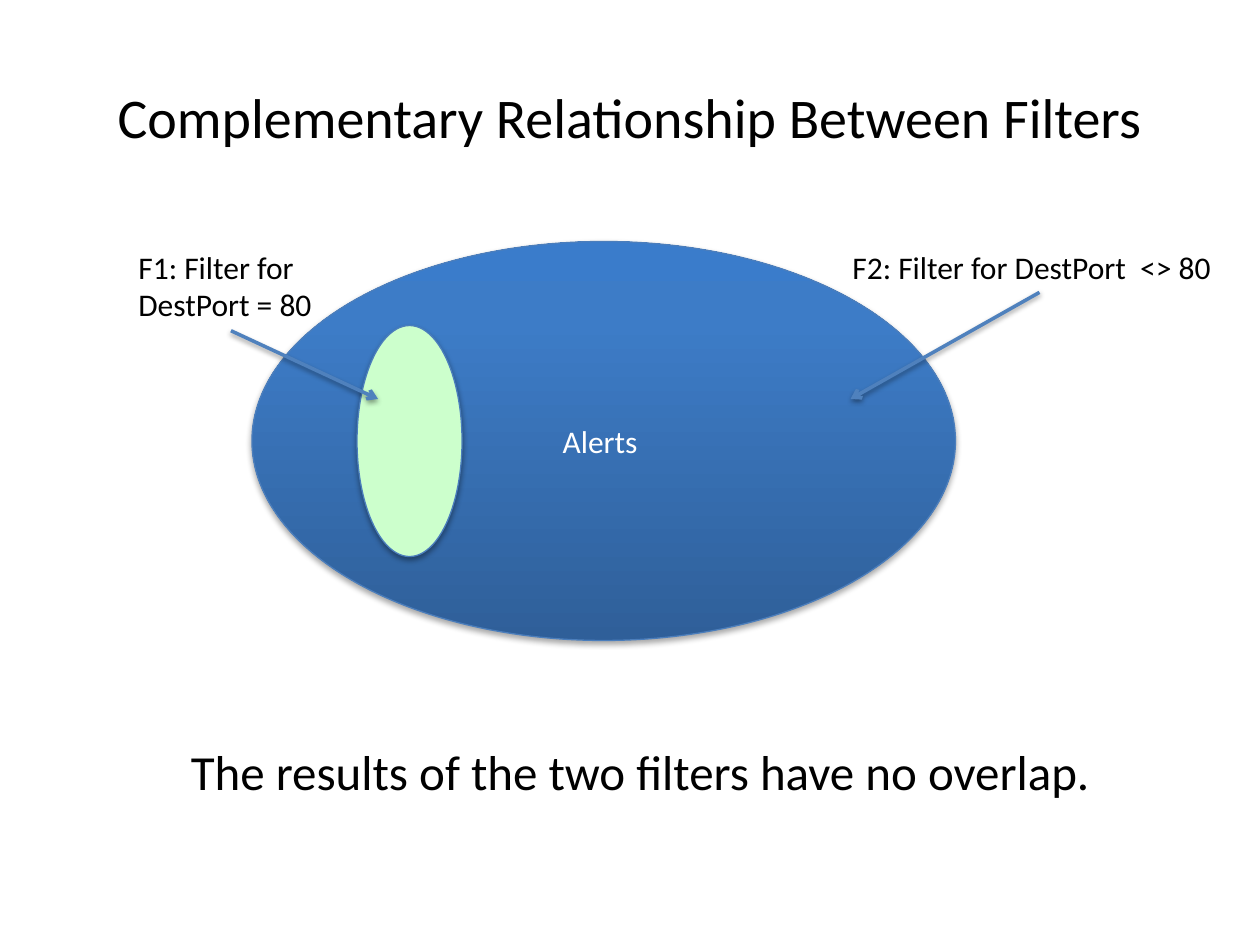
from dataclasses import dataclass

from lxml.etree import SubElement
from pptx import Presentation
from pptx.dml.color import RGBColor
from pptx.enum.shapes import MSO_CONNECTOR as Connector, MSO_SHAPE as Shape
from pptx.enum.text import MSO_ANCHOR as Anchor, PP_ALIGN as Align
from pptx.oxml import parse_xml
from pptx.oxml.ns import nsdecls, qn
from pptx.util import Inches, Pt


@dataclass(frozen=True)
class Theme:
    font: str = "Calibri"
    title_size: int = 32
    summary_size: int = 28
    label_size: int = 18
    ink: str = "000000"
    on_dark: str = "FFFFFF"
    subset: str = "CCFFCC"
    outline: str = "4B7EBC"
    arrow: str = "4F81BD"
    gradient: tuple = ((0, "2F5F99"), (80, "3D7CC7"), (100, "3A7CCB"))


THEME = Theme()
CELL = 1 / 12  # grid unit in inches: the slide is 120 columns by 90 rows

# Areas are (column, row, columns wide, rows high)
TITLE = ("Complementary Relationship Between Filters", (6, 3.6, 108, 15))
SUMMARY = ("The results of the two filters have no overlap.", (17, 70, 95, 10.5))
ALERTS = ("Alerts ", (24, 23, 67, 38))
SUBSET_AREA = (34, 31, 10, 22)
# Label, its area, and the (column, row) its arrow points to
FILTERS = [
    ("F1: Filter for DestPort = 80", (12, 23, 20, 8.5), (36, 38)),
    ("F2: Filter for DestPort  <> 80", (80, 23, 38, 4.85), (81, 38)),
]


def grid(*cells):
    return [Inches(cell * CELL) for cell in cells]


def write(box, text, size=THEME.label_size, color=THEME.ink,
          align=Align.LEFT, anchor=Anchor.TOP):
    frame = box.text_frame
    frame.word_wrap = True
    frame.vertical_anchor = anchor
    para = frame.paragraphs[0]
    para.alignment = align
    span = para.add_run()
    span.text = text
    span.font.name = THEME.font
    span.font.size = Pt(size)
    span.font.color.rgb = RGBColor.from_string(color)


def add_text(page, text, area, **style):
    box = page.shapes.add_textbox(*grid(*area))
    write(box, text, **style)
    return box


def add_shadow(shape, opacity, distance):
    properties = shape.element.spPr
    for effects in properties.findall(qn("a:effectLst")):
        properties.remove(effects)
    properties.append(parse_xml(
        f'<a:effectLst {nsdecls("a")}><a:outerShdw blurRad="{Pt(3.1)}" '
        f'dist="{Pt(distance)}" dir="5400000" rotWithShape="0">'
        f'<a:srgbClr val="{THEME.ink}"><a:alpha val="{opacity * 1000}"/>'
        '</a:srgbClr></a:outerShdw></a:effectLst>'))


def fill_gradient(shape):
    stops = "".join(f'<a:gs pos="{share * 1000}"><a:srgbClr val="{color}"/></a:gs>'
                    for share, color in THEME.gradient)
    shape.element.spPr.find(qn("a:prstGeom")).addnext(parse_xml(
        f'<a:gradFill {nsdecls("a")} rotWithShape="1"><a:gsLst>{stops}</a:gsLst>'
        '<a:lin ang="16200000" scaled="0"/></a:gradFill>'))


def add_ellipse(page, area, fill=None):
    """Draw a shadowed ellipse, with the theme gradient unless a fill is given."""
    ellipse = page.shapes.add_shape(Shape.OVAL, *grid(*area))
    if fill:
        ellipse.fill.solid()
        ellipse.fill.fore_color.rgb = RGBColor.from_string(fill)
    else:
        fill_gradient(ellipse)
    ellipse.line.color.rgb = RGBColor.from_string(THEME.outline)
    ellipse.line.width = Pt(0.75)
    add_shadow(ellipse, opacity=35, distance=1.8)
    return ellipse


def add_arrow(page, label, target):
    """Point from the bottom middle of a label to a grid position."""
    arrow = page.shapes.add_connector(Connector.STRAIGHT, 0, 0, *grid(*target))
    arrow.begin_connect(label, 2)
    arrow.line.color.rgb = RGBColor.from_string(THEME.arrow)
    arrow.line.width = Pt(2)
    SubElement(arrow.element.spPr.find(qn("a:ln")), qn("a:tailEnd"), type="arrow")
    add_shadow(arrow, opacity=38, distance=1.6)


def main():
    deck = Presentation()
    deck.slide_width, deck.slide_height = grid(120, 90)
    page = deck.slides.add_slide(deck.slide_layouts[6])

    add_text(page, *TITLE, size=THEME.title_size,
             align=Align.CENTER, anchor=Anchor.MIDDLE)
    text, area = ALERTS
    write(add_ellipse(page, area), text, color=THEME.on_dark,
          align=Align.CENTER, anchor=Anchor.MIDDLE)
    add_ellipse(page, SUBSET_AREA, THEME.subset)
    add_text(page, *SUMMARY, size=THEME.summary_size)

    labels = [add_text(page, text, area) for text, area, _ in FILTERS]
    for label, (_, _, target) in zip(labels, FILTERS):
        add_arrow(page, label, target)

    deck.save("out.pptx")


if __name__ == "__main__":
    main()
